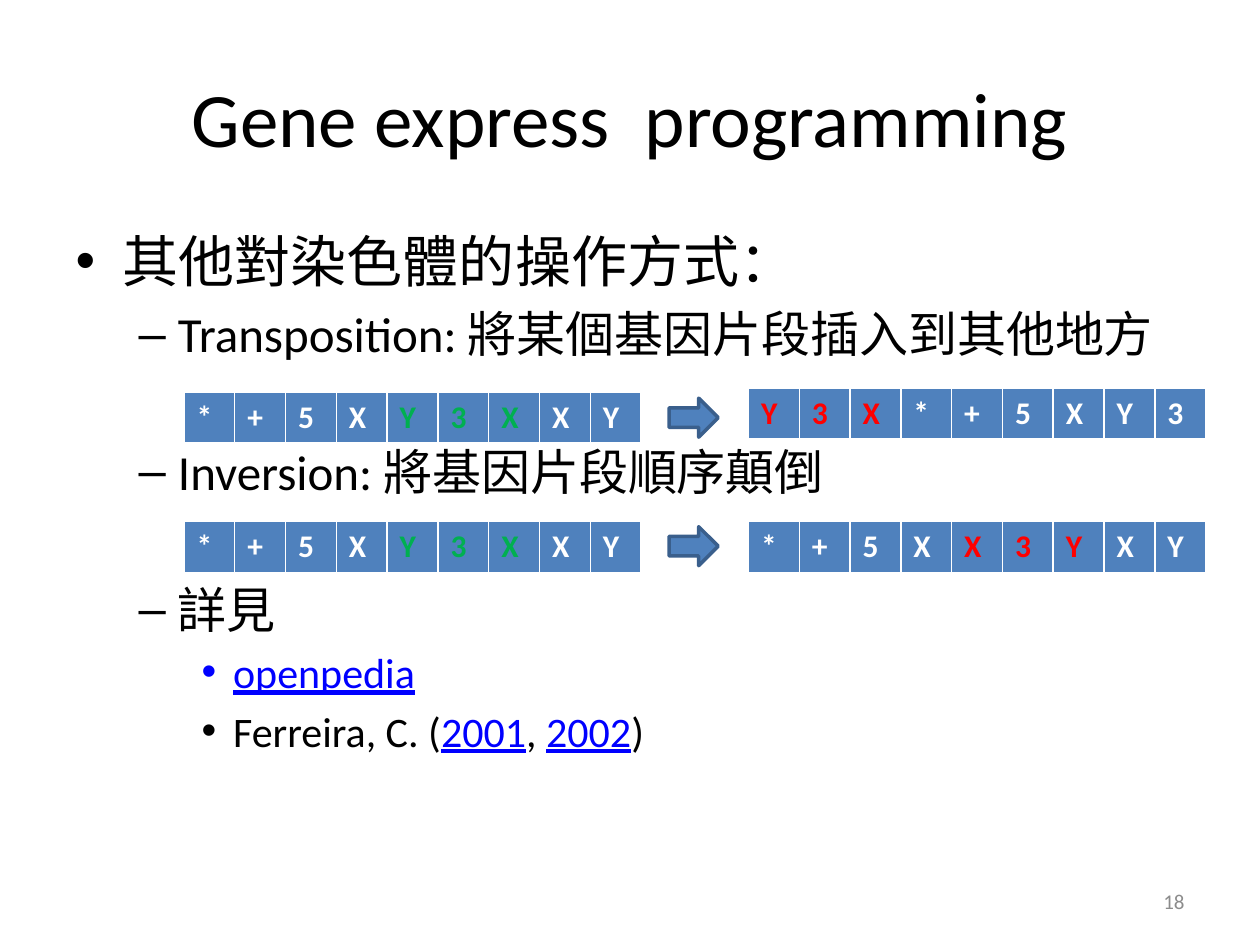
from pptx import Presentation
from pptx.dml.color import RGBColor
from pptx.enum.shapes import MSO_SHAPE
from pptx.enum.text import MSO_ANCHOR, MSO_AUTO_SIZE, PP_ALIGN
from pptx.util import Inches, Pt

BLACK = RGBColor(0x00, 0x00, 0x00)
WHITE = RGBColor(0xFF, 0xFF, 0xFF)
BLUE = RGBColor(0x4F, 0x81, 0xBD)
DARK_BLUE = RGBColor(0x3A, 0x5F, 0x8C)
LINK_BLUE = RGBColor(0x00, 0x00, 0xFF)
GREEN = RGBColor(0x00, 0xB0, 0x50)
RED = RGBColor(0xFF, 0x00, 0x00)
GRAY = RGBColor(0x8C, 0x8C, 0x8C)
FONT = "Calibri"

TITLE = "Gene express  programming"
PAGE_NUMBER = "18"

# Level, room for a gene row above, and runs as (text, is_link)
OUTLINE = [
    (0, False, [("其他對染色體的操作方式：", False)]),
    (1, False, [("Transposition: 將某個基因片段插入到其他地方", False)]),
    (1, True, [("Inversion: 將基因片段順序顛倒", False)]),
    (1, True, [("詳見", False)]),
    (2, False, [("openpedia", True)]),
    (2, False, [("Ferreira, C. (", False), ("2001", True), (", ", False),
                ("2002", True), (")", False)]),
]
LEVEL_SIZES = [32, 28, 24]
GENE_ROW_GAP = Pt(45)

# Genes, first marked gene, and the tops of both tables and of the arrow
OPERATIONS = [
    {"before": ("*+5XY3XXY", 4, 3.11), "after": ("Y3X*+5XY3", 0, 3.08), "arrow": 3.16},
    {"before": ("*+5XY3XXY", 4, 4.14), "after": ("*+5XX3YXY", 4, 4.14), "arrow": 4.18},
]
MARKED_LENGTH = 3
BEFORE_LEFT, ARROW_LEFT, AFTER_LEFT = 1.46, 5.31, 5.94
TABLE_WIDTH, ROW_HEIGHT = 3.63, 0.39


def style_font(font, size, color, bold=None):
    font.name = FONT
    font.size = Pt(size)
    font.color.rgb = color
    font.bold = bold


def place(shape, left, top, width, height):
    shape.left, shape.top = Inches(left), Inches(top)
    shape.width, shape.height = Inches(width), Inches(height)


def fill_outline(text_frame):
    text_frame.auto_size = MSO_AUTO_SIZE.NONE
    for index, (level, gap_above, runs) in enumerate(OUTLINE):
        paragraph = text_frame.paragraphs[0] if index == 0 else text_frame.add_paragraph()
        paragraph.level = level
        if gap_above:
            paragraph.space_before = GENE_ROW_GAP
        for text, is_link in runs:
            run = paragraph.add_run()
            run.text = text
            style_font(run.font, LEVEL_SIZES[level], LINK_BLUE if is_link else BLACK)
            if is_link:
                run.font.underline = True


def add_chromosome(slide, left, chromosome, mark_color):
    """Add a one-row table with one gene per cell and a coloured segment."""
    genes, mark_start, top = chromosome
    table = slide.shapes.add_table(
        1, len(genes), Inches(left), Inches(top),
        Inches(TABLE_WIDTH), Inches(ROW_HEIGHT)).table
    table.horz_banding = False
    for column, gene in enumerate(genes):
        cell = table.cell(0, column)
        cell.text = gene
        cell.fill.solid()
        cell.fill.fore_color.rgb = BLUE
        is_marked = mark_start <= column < mark_start + MARKED_LENGTH
        style_font(cell.text_frame.paragraphs[0].font, 18,
                   mark_color if is_marked else WHITE, bold=True)


def add_arrow(slide, top):
    arrow = slide.shapes.add_shape(
        MSO_SHAPE.RIGHT_ARROW, Inches(ARROW_LEFT), Inches(top), Inches(0.39), Inches(0.31))
    arrow.shadow.inherit = False
    arrow.fill.solid()
    arrow.fill.fore_color.rgb = BLUE
    arrow.line.color.rgb = DARK_BLUE
    arrow.line.width = Pt(2)


def add_page_number(slide):
    box = slide.shapes.add_textbox(Inches(7.17), Inches(6.95), Inches(2.33), Inches(0.4))
    box.text_frame.word_wrap = True
    box.text_frame.vertical_anchor = MSO_ANCHOR.MIDDLE
    paragraph = box.text_frame.paragraphs[0]
    paragraph.text = PAGE_NUMBER
    paragraph.alignment = PP_ALIGN.RIGHT
    style_font(paragraph.font, 12, GRAY)


def main():
    presentation = Presentation()
    presentation.slide_width, presentation.slide_height = Inches(10), Inches(7.5)
    title_and_content = presentation.slide_layouts[1]
    slide = presentation.slides.add_slide(title_and_content)

    title = slide.shapes.title
    place(title, 0.5, 0.3, 9, 1.25)
    title.text = TITLE
    style_font(title.text_frame.paragraphs[0].font, 44, BLACK)

    body = slide.placeholders[1]
    place(body, 0.5, 1.75, 9, 5.46)
    fill_outline(body.text_frame)

    for operation in OPERATIONS:
        add_chromosome(slide, BEFORE_LEFT, operation["before"], GREEN)
        add_arrow(slide, operation["arrow"])
        add_chromosome(slide, AFTER_LEFT, operation["after"], RED)

    add_page_number(slide)
    presentation.save("out.pptx")


if __name__ == "__main__":
    main()
